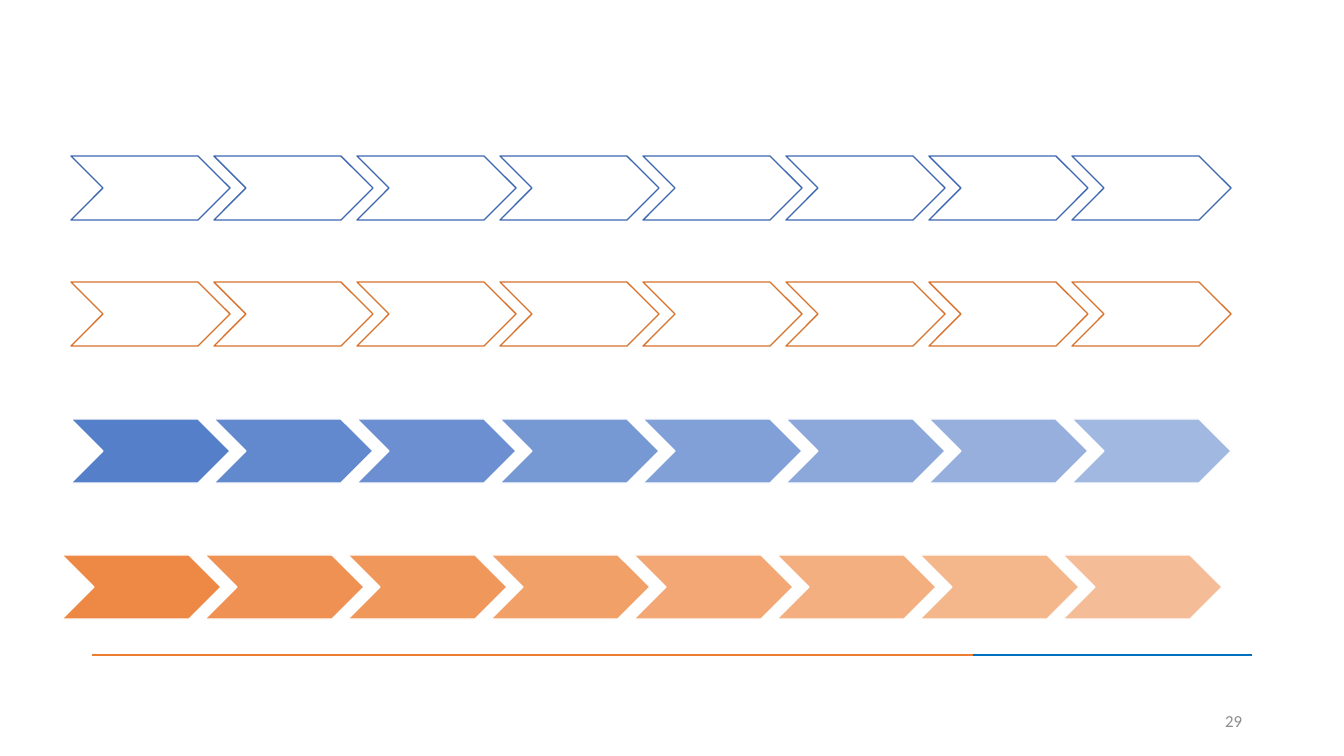
import lxml.etree
import pptx
import pptx.dml.color
import pptx.enum.shapes
import pptx.enum.text
import pptx.oxml.ns
import pptx.util

PX = 914400 / 100.8
SLIDE_SIZE = (1344, 756)

CHEVRON_COUNT = 8
CHEVRON_SIZE = (159, 64)
CHEVRON_STEP = 143

# left, top, fill, line, opacity of the first and last chevron in percent
CHEVRON_ROWS = [
    (62, 555, "ED7D31", "FFFFFF", (90, 50)),
    (71, 419, "4472C4", "FFFFFF", (90, 50)),
    (71, 156, "FFFFFF", "3E67B2", (100, 100)),
    (71, 282, "FFFFFF", "D7712C", (100, 100)),
]

# start, end, colour
FOOTER_TOP = 655
FOOTER_LINES = [(92, 973, "ED7D31"), (973, 1252, "0070C0")]

PAGE_NUMBER = "29"
PAGE_NUMBER_BOX = (1210, 701, 42, 40)


def emu(*pixels):
    return [pptx.util.Emu(round(value * PX)) for value in pixels]


def colour(hex_string):
    return pptx.dml.color.RGBColor.from_string(hex_string)


def set_opacity(shape, percent):
    fill_colour = shape._element.spPr.find(
        pptx.oxml.ns.qn("a:solidFill")
    )[0]
    alpha = lxml.etree.SubElement(fill_colour, pptx.oxml.ns.qn("a:alpha"))
    alpha.set("val", str(round(percent * 1000)))


def add_footer_line(group, start, end, line_colour):
    line = group.shapes.add_connector(
        pptx.enum.shapes.MSO_CONNECTOR.STRAIGHT,
        *emu(start, FOOTER_TOP, end, FOOTER_TOP),
    )
    line.line.color.rgb = colour(line_colour)
    line.line.width = pptx.util.Pt(1.5)
    lxml.etree.SubElement(line._element.spPr, pptx.oxml.ns.qn("a:effectLst"))


def add_chevron_row(slide, left, top, fill, line, opacities):
    """Add a row of chevrons whose opacity runs evenly from first to last."""
    group = slide.shapes.add_group_shape()
    first, last = opacities
    for index in range(CHEVRON_COUNT):
        chevron = group.shapes.add_shape(
            pptx.enum.shapes.MSO_SHAPE.CHEVRON,
            *emu(left + index * CHEVRON_STEP, top, *CHEVRON_SIZE),
        )
        chevron.shadow.inherit = False
        chevron.fill.solid()
        chevron.fill.fore_color.rgb = colour(fill)
        chevron.line.color.rgb = colour(line)
        chevron.line.width = pptx.util.Pt(1)
        opacity = first + (last - first) * index / (CHEVRON_COUNT - 1)
        if opacity < 100:
            set_opacity(chevron, opacity)


def add_page_number(slide):
    box = slide.shapes.add_textbox(*emu(*PAGE_NUMBER_BOX))
    text_frame = box.text_frame
    text_frame.word_wrap = True
    text_frame.vertical_anchor = pptx.enum.text.MSO_ANCHOR.MIDDLE
    text_frame.text = PAGE_NUMBER
    paragraph = text_frame.paragraphs[0]
    paragraph.alignment = pptx.enum.text.PP_ALIGN.RIGHT
    font = paragraph.runs[0].font
    font.name = "Calibri"
    font.size = pptx.util.Pt(12)
    font.color.rgb = colour("8C8C8C")


def main():
    presentation = pptx.Presentation()
    presentation.slide_width, presentation.slide_height = emu(*SLIDE_SIZE)
    slide = presentation.slides.add_slide(presentation.slide_layouts[6])
    footer = slide.shapes.add_group_shape()
    for footer_line in FOOTER_LINES:
        add_footer_line(footer, *footer_line)
    add_page_number(slide)
    for row in CHEVRON_ROWS:
        add_chevron_row(slide, *row)
    presentation.save("out.pptx")


if __name__ == "__main__":
    main()
